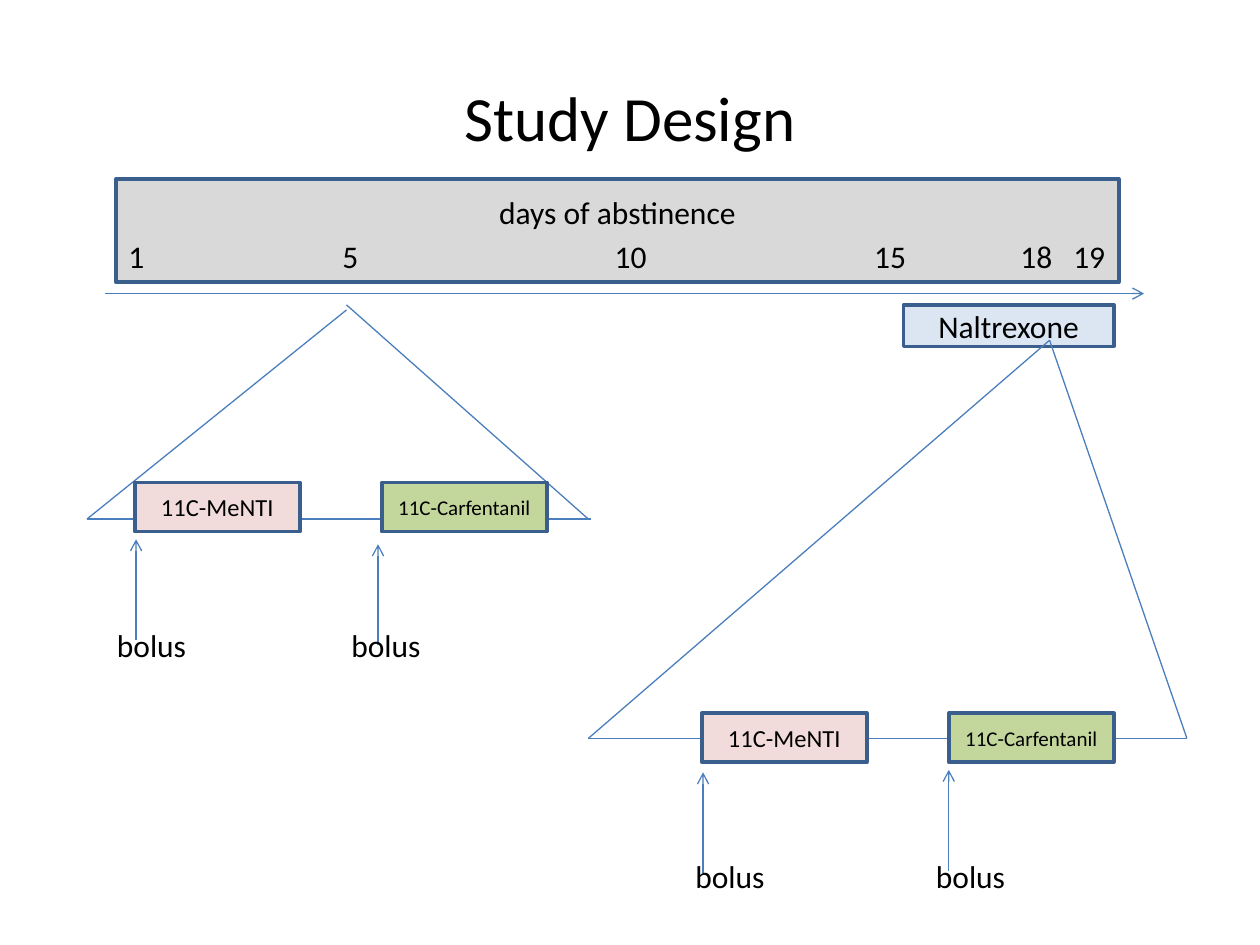
from pptx import Presentation
from pptx.dml.color import RGBColor
from pptx.enum.shapes import MSO_CONNECTOR as CONN, MSO_SHAPE as SHAPE
from pptx.enum.text import MSO_ANCHOR as ANCHOR, PP_ALIGN as ALIGN
from pptx.oxml.ns import qn
from pptx.util import Inches, Pt
from lxml.etree import SubElement

FONT, INK, EDGE, LINE = "Calibri", "000000", "3A5F8C", "4B7EBC"
GREY, BLUE = "D9D9D9", "DCE6F2"

# Day and its distance from the start of the scale
DAYS = [("1", 0), ("5", 1.7), ("10", 3.86), ("15", 5.92), ("18", 7.08), ("19", 7.5)]

# Tracer, fill, text size
TRACERS = [("11C-MeNTI", "F2DCDB", 14), ("11C-Carfentanil", "C3D69B", 12)]
BOX_W, BOX_H, STEP = 1.31, 0.39, 1.96
RISE = 0.8  # length of a bolus arrow

# fan: the lines of the callout; boxes: corner of the first tracer box
# bolus: arrow tip x, arrow tip y, label left for each tracer
SCANS = [
    {"fan": [(2.75, 2.46, 0.69, 4.12), (2.75, 2.42, 4.67, 4.12),
             (0.69, 4.12, 4.69, 4.12)],
     "boxes": (1.07, 3.83), "label_top": 4.92,
     "bolus": [(1.08, 4.28, 0.83), (3, 4.32, 2.69)]},
    {"fan": [(4.67, 5.86, 9.42, 5.86), (8.33, 2.7, 4.67, 5.86),
             (8.33, 2.7, 9.42, 5.86)],
     "boxes": (5.57, 5.66), "label_top": 6.75,
     "bolus": [(5.58, 6.13, 5.42), (7.53, 6.11, 7.33)]},
]


def color(text):
    return RGBColor.from_string(text)


def write(shape, text, size, align=ALIGN.LEFT, anchor=ANCHOR.TOP):
    frame = shape.text_frame
    frame.word_wrap = True
    frame.vertical_anchor = anchor
    para = frame.paragraphs[0]
    para.alignment = align
    run = para.add_run()
    run.text = text
    run.font.name, run.font.size = FONT, Pt(size)
    run.font.color.rgb = color(INK)
    return frame


def label(at, text, size, **style):
    return write(slide.shapes.add_textbox(*map(Inches, at)), text, size, **style)


def box(at, fill, text, size, anchor=ANCHOR.MIDDLE):
    shape = slide.shapes.add_shape(SHAPE.RECTANGLE, *map(Inches, at))
    shape.shadow.inherit = False
    shape.fill.solid()
    shape.fill.fore_color.rgb = color(fill)
    shape.line.color.rgb = color(EDGE)
    shape.line.width = Pt(2)
    return write(shape, text, size, ALIGN.CENTER, anchor)


def line(shapes, ends, arrow=False):
    link = shapes.add_connector(CONN.STRAIGHT, *map(Inches, ends))
    link.line.color.rgb = color(LINE)
    link.line.width = Pt(0.75)
    props = link._element.spPr
    if arrow:
        SubElement(props.find(qn("a:ln")), qn("a:tailEnd"), type="arrow")
    SubElement(props, qn("a:effectLst"))


def set_tabs(para, stops):
    tabs = SubElement(para._p.get_or_add_pPr(), qn("a:tabLst"))
    for stop in stops:
        SubElement(tabs, qn("a:tab"), pos=str(Inches(stop)), algn="l")


deck = Presentation()
deck.slide_width, deck.slide_height = Inches(10), Inches(7.5)
slide = deck.slides.add_slide(deck.slide_layouts[6])

# Time scale
bar = box((0.92, 1.42, 7.96, 0.82), GREY, "days of abstinence", 18, ANCHOR.TOP)
bar.margin_top = Inches(0.11)
label((0.5, 0.3, 9, 1.25), "Study Design", 36, align=ALIGN.CENTER, anchor=ANCHOR.MIDDLE)
line(slide.shapes, (0.83, 2.33, 9.08, 2.33), arrow=True)
scale = label((0.92, 1.83, 8.5, 0.4), "\t".join(day for day, _ in DAYS), 18)
set_tabs(scale.paragraphs[0], [stop for _, stop in DAYS[1:]])
box((7.17, 2.42, 1.67, 0.33), BLUE, "Naltrexone", 18)

# Scan sessions
for scan in SCANS:
    fan = slide.shapes.add_group_shape()
    for ends in scan["fan"]:
        line(fan.shapes, ends)
    left, top = scan["boxes"]
    for i, (tracer, fill, size) in enumerate(TRACERS):
        x, y, text_x = scan["bolus"][i]
        line(slide.shapes, (x, y + RISE, x, y), arrow=True)
        box((left + i * STEP, top, BOX_W, BOX_H), fill, tracer, size)
        label((text_x, scan["label_top"], 1.33, 0.42), "bolus", 18)

deck.save("out.pptx")
